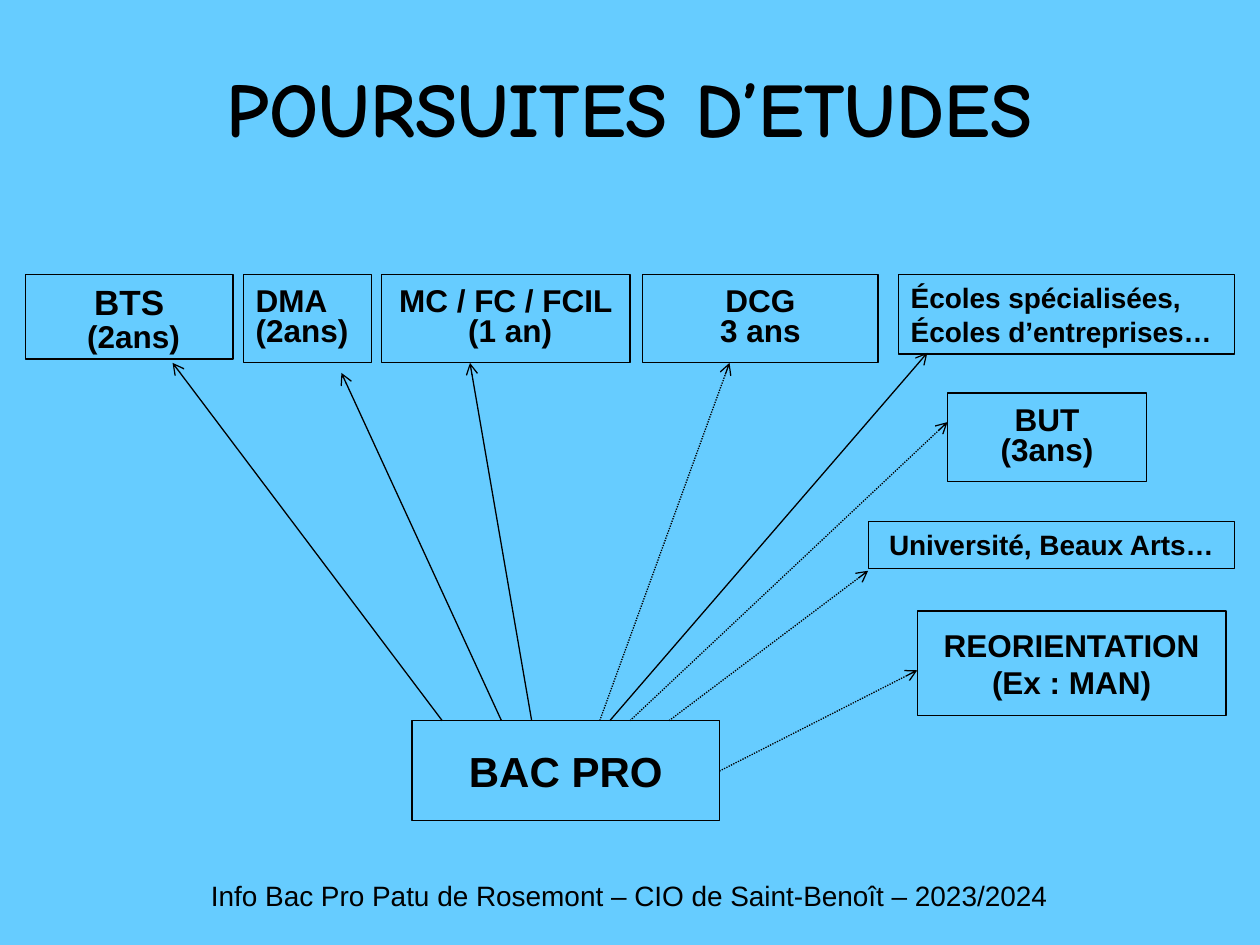
from lxml import etree
from pptx import Presentation
from pptx.dml.color import RGBColor
from pptx.enum.dml import MSO_LINE
from pptx.enum.shapes import MSO_CONNECTOR, MSO_SHAPE
from pptx.enum.text import MSO_ANCHOR, PP_ALIGN
from pptx.oxml.ns import qn
from pptx.util import Inches, Pt

SKY = RGBColor(0x66, 0xCC, 0xFF)
BLACK = RGBColor(0, 0, 0)
LEFT, CENTER = PP_ALIGN.LEFT, PP_ALIGN.CENTER
TOP, MIDDLE = MSO_ANCHOR.TOP, MSO_ANCHOR.MIDDLE
DOTTED = MSO_LINE.ROUND_DOT
LINE_WIDTH = Pt(0.75)

DESTINATIONS = [
    ((1.73, 0, 1.02, 0.7), ["DMA", "(2ans)"], dict(align=LEFT, spacing=0.8)),
    ((2.83, 0, 1.97, 0.7), ["MC / FC / FCIL", " (1 an)"], dict(spacing=0.8)),
    ((4.9, 0, 1.87, 0.7), ["DCG", "3 ans"], dict(spacing=0.8)),
    ((6.93, 0, 2.67, 0.63), ["Écoles spécialisées, Écoles d’entreprises…"],
     dict(size=16, align=LEFT, anchor=TOP)),
    ((7.32, 0.94, 1.58, 0.7), ["BUT", "(3ans)"], dict(spacing=0.8)),
    ((6.69, 1.96, 2.91, 0.37), ["Université, Beaux Arts…"], dict(size=16, anchor=TOP)),
    ((7.08, 2.67, 2.45, 0.83), ["REORIENTATION", "(Ex : MAN)"], {}),
]
BAC_PRO = (3.07, 3.54, 2.44, 0.79)
SOLID_PATHS = [
    ((3.31, 3.54), (1.17, 0.7)),
    ((3.78, 3.54), (2.51, 0.78)),
    ((4.02, 3.54), (3.53, 0.7)),
    ((4.64, 3.54), (7.16, 0.62)),
]
DOTTED_PATHS = [
    ((4.56, 3.54), (5.59, 0.7)),
    ((4.8, 3.54), (7.32, 1.17)),
    ((5.11, 3.54), (6.69, 2.35)),
    ((5.51, 3.94), (7.08, 3.14)),
]


def write_text(frame, lines, size=18, font="Arial", bold=True, align=CENTER,
               anchor=MIDDLE, spacing=1.0):
    frame.word_wrap = True
    frame.vertical_anchor = anchor
    for index, line in enumerate(lines):
        paragraph = frame.add_paragraph() if index else frame.paragraphs[0]
        paragraph.alignment = align
        paragraph.line_spacing = spacing
        run = paragraph.add_run()
        run.text = line
        run.font.size = Pt(size)
        run.font.name = font
        run.font.bold = bold
        run.font.color.rgb = BLACK
    return frame


def add_box(slide, origin, place, lines, **text_format):
    x, y, width, height = place
    box = slide.shapes.add_shape(
        MSO_SHAPE.RECTANGLE, Inches(origin[0] + x), Inches(origin[1] + y),
        Inches(width), Inches(height))
    box.shadow.inherit = False
    box.fill.background()
    box.line.color.rgb = BLACK
    box.line.width = LINE_WIDTH
    return write_text(box.text_frame, lines, **text_format)


def add_arrow(slide, origin, start, end, dash=None):
    points = [Inches(o + p) for point in (start, end) for o, p in zip(origin, point)]
    arrow = slide.shapes.add_connector(MSO_CONNECTOR.STRAIGHT, *points)
    arrow.line.color.rgb = BLACK
    arrow.line.width = LINE_WIDTH
    if dash:
        arrow.line.dash_style = dash
    etree.SubElement(arrow.line._get_or_add_ln(), qn("a:tailEnd"), type="arrow")
    etree.SubElement(arrow._element.spPr, qn("a:effectLst"))


def add_caption(slide, area, text, **text_format):
    caption = slide.shapes.add_textbox(*map(Inches, area))
    write_text(caption.text_frame, [text], **text_format)


def add_bts(slide, origin):
    frame = add_box(slide, origin, (0, 0, 1.65, 0.67), ["BTS", " (2ans)"], anchor=TOP)
    name, duration = frame.paragraphs
    name.runs[0].font.size = Pt(20)
    duration.line_spacing = 0.8
    duration.space_before = Pt(1)


def add_pathways(slide, origin):
    add_bts(slide, origin)
    for place, lines, text_format in DESTINATIONS:
        add_box(slide, origin, place, lines, **text_format)
    add_box(slide, origin, BAC_PRO, ["BAC PRO"], size=24)
    for start, end in SOLID_PATHS:
        add_arrow(slide, origin, start, end)
    for start, end in DOTTED_PATHS:
        add_arrow(slide, origin, start, end, dash=DOTTED)


def main():
    deck = Presentation()
    deck.slide_width, deck.slide_height = Inches(10), Inches(7.5)
    slide = deck.slides.add_slide(deck.slide_layouts[6])
    slide.background.fill.solid()
    slide.background.fill.fore_color.rgb = SKY
    add_caption(slide, (0.5, 0.3, 9, 1.09), "POURSUITES D’ETUDES",
                size=44, font="Comic Neue")
    add_pathways(slide, (0.2, 2.18))
    add_caption(slide, (1.06, 6.92, 7.87, 0.36),
                "Info Bac Pro Patu de Rosemont – CIO de Saint-Benoît – 2023/2024",
                size=16, bold=False, anchor=TOP)
    deck.save("out.pptx")


if __name__ == "__main__":
    main()
